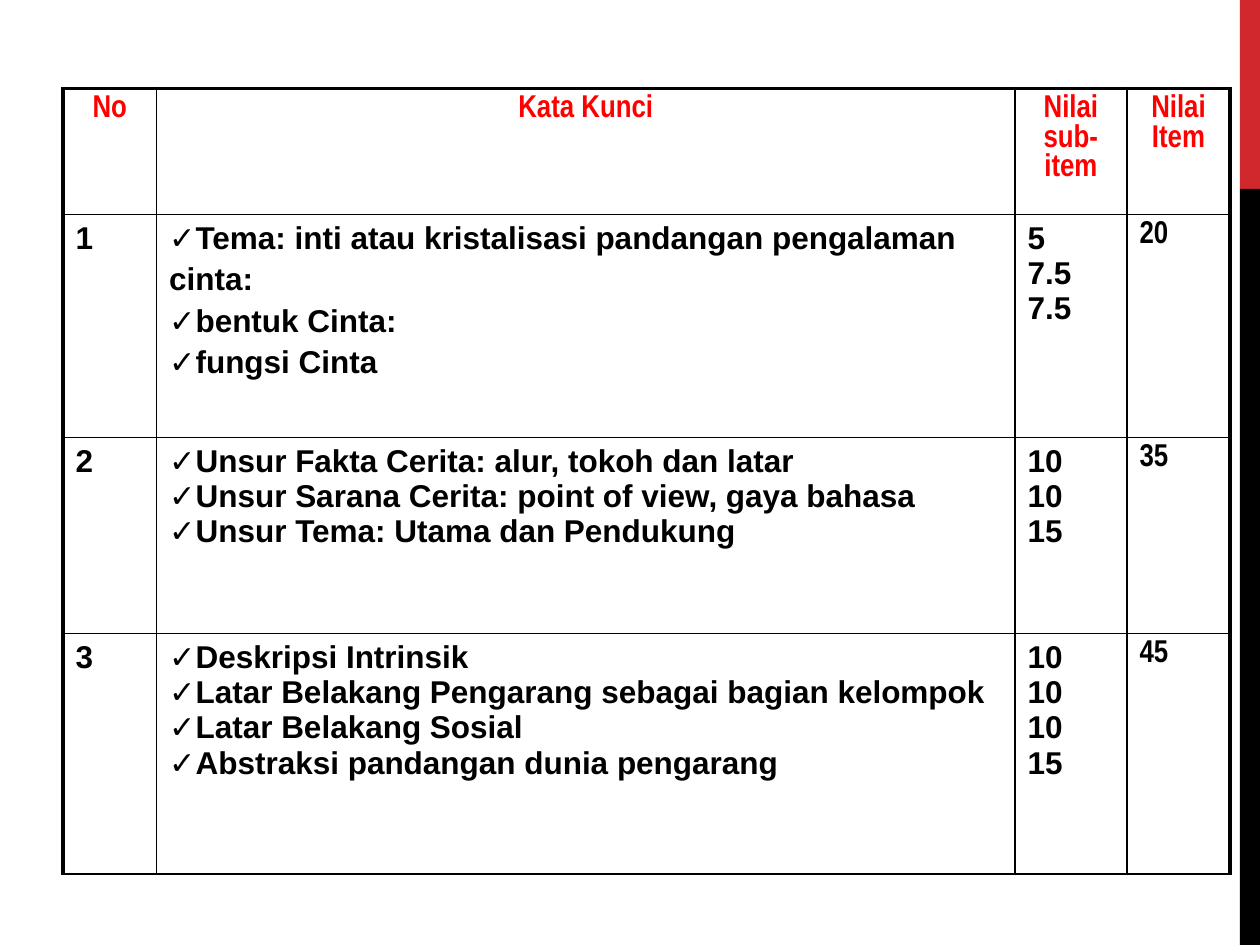
from dataclasses import dataclass

from lxml import etree
from pptx import Presentation
from pptx.dml.color import RGBColor
from pptx.enum import shapes, text
from pptx.oxml import ns
from pptx.util import Pt

BLACK = RGBColor(0x00, 0x00, 0x00)
RED = RGBColor(0xFF, 0x00, 0x00)
ACCENT = RGBColor(0xD1, 0x28, 0x2E)

WIDE, NARROW = "Arial", "Arial Narrow"
FONT_SIZE = 18
SPACE_BEFORE = 3.6
THIN, THICK = 1, 2.25

COLUMN_WIDTHS = (53.5, 490.5, 64, 59)
ROW_HEIGHTS = (72, 127.5, 112, 137.5)
HEADINGS = ("No", "Kata Kunci", "Nilai sub-item", "Nilai Item")


@dataclass(frozen=True)
class Band:
    top: float
    height: float
    color: RGBColor


@dataclass(frozen=True)
class Line:
    words: str
    checked: bool = True


@dataclass(frozen=True)
class Item:
    keywords: tuple[Line, ...]
    subscores: tuple[str, ...]
    score: str
    spacing: float = 0


BANDS = (Band(0, 108, ACCENT), Band(108, 432, BLACK))

ITEMS = (
    Item(
        (
            Line("Tema: inti atau kristalisasi pandangan pengalaman"),
            Line("cinta:", checked=False),
            Line("bentuk Cinta:"),
            Line("fungsi Cinta"),
        ),
        ("5", "7.5", "7.5"),
        "20",
        SPACE_BEFORE,
    ),
    Item(
        (
            Line("Unsur Fakta Cerita: alur, tokoh dan latar"),
            Line("Unsur Sarana Cerita: point of view, gaya bahasa"),
            Line("Unsur Tema: Utama dan Pendukung"),
        ),
        ("10", "10", "15"),
        "35",
    ),
    Item(
        (
            Line("Deskripsi Intrinsik"),
            Line("Latar Belakang Pengarang sebagai bagian kelompok"),
            Line("Latar Belakang Sosial"),
            Line("Abstraksi pandangan dunia pengarang"),
        ),
        ("10", "10", "10", "15"),
        "45",
    ),
)


def draw_band(slide, band: Band) -> None:
    bar = slide.shapes.add_shape(
        shapes.MSO_SHAPE.RECTANGLE, Pt(708.5), Pt(band.top), Pt(11.5), Pt(band.height)
    )
    bar.shadow.inherit = False
    bar.fill.solid()
    bar.fill.fore_color.rgb = band.color
    bar.line.fill.background()


def set_check_bullet(paragraph) -> None:
    properties = paragraph._p.get_or_add_pPr()
    properties.set("marL", "0")
    properties.set("indent", "0")
    etree.SubElement(properties, ns.qn("a:buFont"), typeface=WIDE)
    etree.SubElement(properties, ns.qn("a:buChar"), char="✓")


def write_cell(
    cell,
    lines: tuple[Line, ...],
    font: str = WIDE,
    color: RGBColor = BLACK,
    spacing: float = 0,
    align=text.PP_ALIGN.LEFT,
) -> None:
    frame = cell.text_frame
    for index, line in enumerate(lines):
        paragraph = frame.add_paragraph() if index else frame.paragraphs[0]
        paragraph.alignment = align
        paragraph.space_before = Pt(spacing)
        if line.checked:
            set_check_bullet(paragraph)
        run = paragraph.add_run()
        run.text = line.words
        run.font.name = font
        run.font.size = Pt(FONT_SIZE)
        run.font.bold = True
        run.font.color.rgb = color


def set_borders(cell, widths: dict[str, float]) -> None:
    """Put the border lines ahead of the fill, as the schema orders them."""
    properties = cell._tc.get_or_add_tcPr()
    for position, (side, width) in enumerate(widths.items()):
        border = etree.Element(ns.qn(f"a:{side}"), w=str(Pt(width)))
        fill = etree.SubElement(border, ns.qn("a:solidFill"))
        etree.SubElement(fill, ns.qn("a:srgbClr"), val=str(BLACK))
        properties.insert(position, border)


def plain(*words: str) -> tuple[Line, ...]:
    return tuple(Line(word, checked=False) for word in words)


def draw_score_table(slide) -> None:
    table = slide.shapes.add_table(
        len(ROW_HEIGHTS), len(COLUMN_WIDTHS),
        Pt(36), Pt(50.5), Pt(sum(COLUMN_WIDTHS)), Pt(sum(ROW_HEIGHTS)),
    ).table
    table.first_row = table.horz_banding = False
    for column, width in zip(table.columns, COLUMN_WIDTHS):
        column.width = Pt(width)
    for row, height in zip(table.rows, ROW_HEIGHTS):
        row.height = Pt(height)

    last_column = len(COLUMN_WIDTHS) - 1
    for r in range(len(ROW_HEIGHTS)):
        for c in range(len(COLUMN_WIDTHS)):
            cell = table.cell(r, c)
            cell.fill.background()
            set_borders(cell, {
                "lnL": THICK if c == 0 else THIN,
                "lnR": THICK if c == last_column else THIN,
                "lnT": THICK if r == 0 else THIN,
                "lnB": THIN,
            })

    for c, heading in enumerate(HEADINGS):
        write_cell(table.cell(0, c), plain(heading), NARROW, RED,
                   SPACE_BEFORE, text.PP_ALIGN.CENTER)
    for number, item in enumerate(ITEMS, start=1):
        write_cell(table.cell(number, 0), plain(str(number)), spacing=SPACE_BEFORE)
        write_cell(table.cell(number, 1), item.keywords, spacing=item.spacing)
        write_cell(table.cell(number, 2), plain(*item.subscores))
        write_cell(table.cell(number, 3), plain(item.score), NARROW,
                   spacing=SPACE_BEFORE)


def main() -> None:
    presentation = Presentation()
    presentation.slide_width, presentation.slide_height = Pt(720), Pt(540)
    slide = presentation.slides.add_slide(presentation.slide_layouts[6])
    for band in BANDS:
        draw_band(slide, band)
    draw_score_table(slide)
    presentation.save("out.pptx")


if __name__ == "__main__":
    main()
